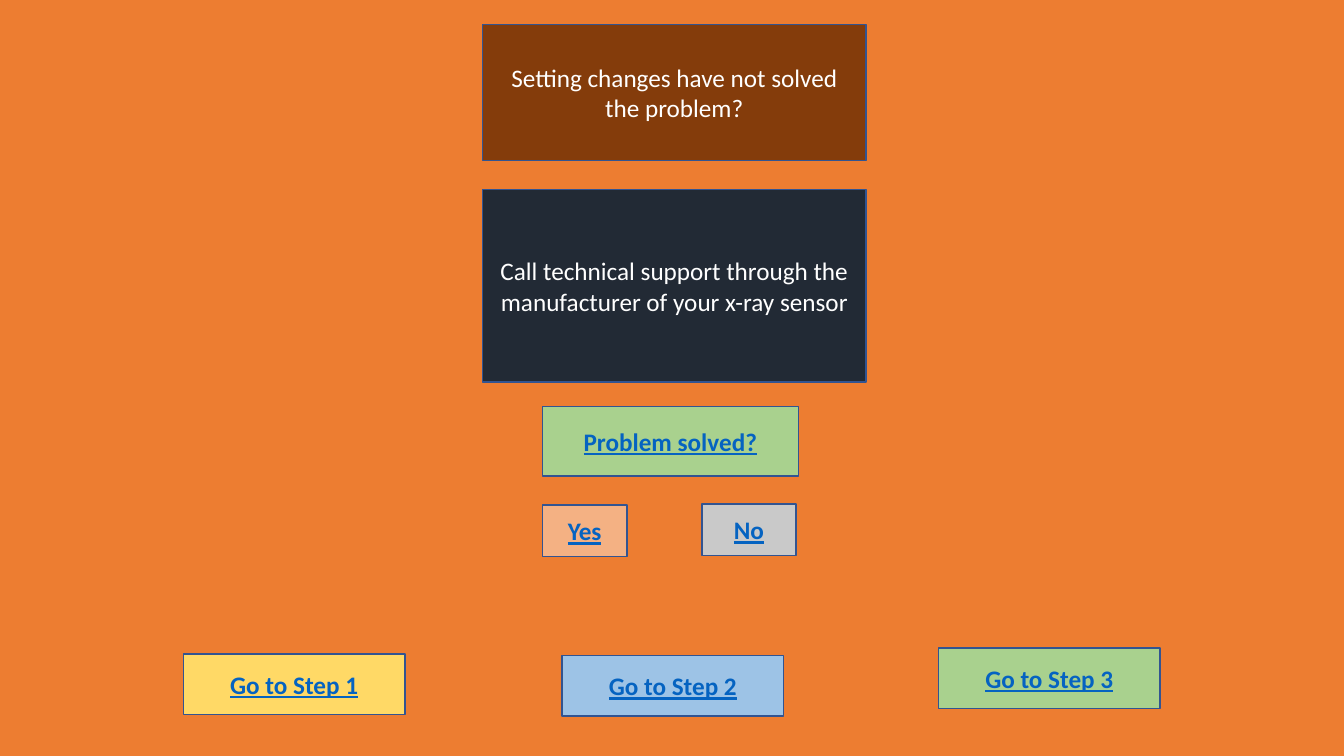
from pptx import Presentation
from pptx import util as u
from pptx.dml.color import RGBColor
from pptx.enum import shapes, text

ORANGE = RGBColor(0xED, 0x7D, 0x31)
BROWN = RGBColor(0x84, 0x3C, 0x0B)
NAVY = RGBColor(0x22, 0x2A, 0x35)
GREEN = RGBColor(0xA9, 0xD1, 0x8E)
PEACH = RGBColor(0xF4, 0xB1, 0x83)
GREY = RGBColor(0xC9, 0xC9, 0xC9)
YELLOW = RGBColor(0xFF, 0xD9, 0x66)
BLUE = RGBColor(0x9D, 0xC3, 0xE6)
OUTLINE = RGBColor(0x32, 0x54, 0x91)
WHITE = RGBColor(0xFF, 0xFF, 0xFF)
LINK_BLUE = RGBColor(0x05, 0x63, 0xC1)

PROCESS = shapes.MSO_SHAPE.FLOWCHART_PROCESS
RECTANGLE = shapes.MSO_SHAPE.RECTANGLE


def add_box(slide, kind, label, fill, left, top, width, height):
    """Add an outlined box with a centred white label."""
    shape = slide.shapes.add_shape(
        kind, u.Pt(left), u.Pt(top), u.Pt(width), u.Pt(height))
    shape.shadow.inherit = False
    shape.fill.solid()
    shape.fill.fore_color.rgb = fill
    shape.line.color.rgb = OUTLINE
    shape.line.width = u.Pt(1)
    frame = shape.text_frame
    frame.word_wrap = True
    frame.vertical_anchor = text.MSO_ANCHOR.MIDDLE
    paragraph = frame.paragraphs[0]
    paragraph.text = label
    paragraph.alignment = text.PP_ALIGN.CENTER
    paragraph.font.name = "Calibri"
    paragraph.font.size = u.Pt(18)
    paragraph.font.color.rgb = WHITE
    return shape


def add_button(slide, kind, label, fill, left, top, width, height):
    """Add a box whose label is bold, blue and underlined."""
    shape = add_box(slide, kind, label, fill, left, top, width, height)
    font = shape.text_frame.paragraphs[0].font
    font.bold = True
    font.underline = True
    font.color.rgb = LINK_BLUE


def main():
    presentation = Presentation()
    presentation.slide_width = u.Pt(960)
    presentation.slide_height = u.Pt(540)
    slide = presentation.slides.add_slide(presentation.slide_layouts[6])
    slide.background.fill.solid()
    slide.background.fill.fore_color.rgb = ORANGE

    # Question and advice
    add_box(slide, PROCESS, "Setting changes have not solved the problem?",
            BROWN, 344.9, 17.3, 273.6, 97.2)
    add_box(slide, PROCESS,
            "Call technical support through the manufacturer of your x-ray sensor",
            NAVY, 344.9, 135.4, 273.6, 137.5)

    # Outcome and its answers
    add_button(slide, PROCESS, "Problem solved?", GREEN, 387.4, 290.2, 182.9, 49.7)
    add_button(slide, PROCESS, "Yes", PEACH, 387.4, 360.7, 60.5, 36.7)
    add_button(slide, PROCESS, "No", GREY, 501.5, 360, 67, 36.7)

    # Step navigation
    steps = [(YELLOW, 131, 467.3), (BLUE, 401.4, 468.2), (GREEN, 670.3, 463)]
    for number, (fill, left, top) in enumerate(steps, start=1):
        add_button(slide, RECTANGLE, f"Go to Step {number}", fill,
                   left, top, 158.4, 43.2)

    presentation.save("out.pptx")


if __name__ == "__main__":
    main()
